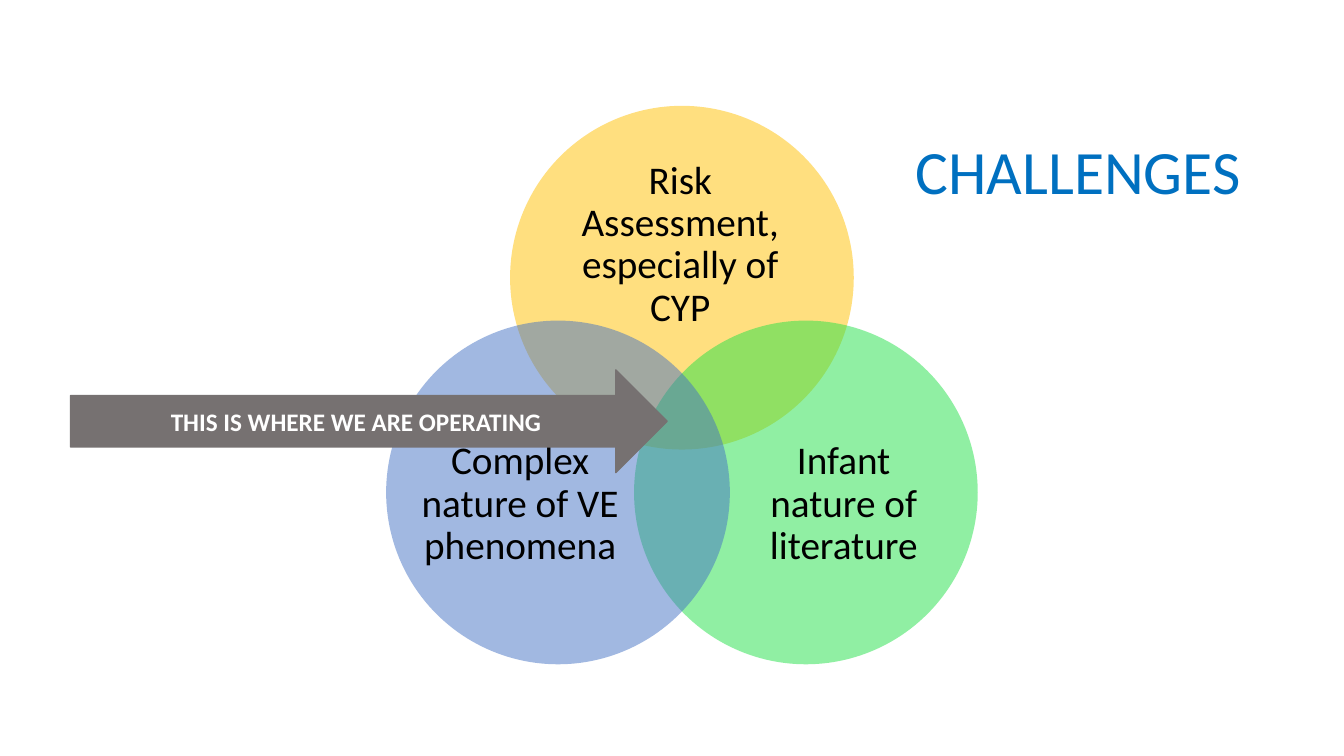
from dataclasses import dataclass
from math import cos, pi, sin

from lxml import etree
from pptx import Presentation
from pptx import util as u
from pptx.dml.color import RGBColor
from pptx.enum import shapes, text
from pptx.oxml.ns import qn


@dataclass(frozen=True)
class Theme:
    font: str = "Calibri"
    title_color: str = "0070C0"
    label_color: str = "000000"
    arrow_fill: str = "767171"
    arrow_text: str = "FFFFFF"
    yellow: str = "FFC000"
    green: str = "23E148"
    blue: str = "4472C4"
    title_size: int = 44
    label_size: int = 28
    arrow_size: int = 18


THEME = Theme()


def points(box):
    return [u.Pt(round(length, 2)) for length in box]


def write(shape, wording, size, color, alignment, bold=False, spacing=1.0):
    frame = shape.text_frame
    frame.word_wrap = True
    frame.auto_size = text.MSO_AUTO_SIZE.NONE
    frame.vertical_anchor = text.MSO_ANCHOR.MIDDLE
    paragraph = frame.paragraphs[0]
    paragraph.alignment = alignment
    paragraph.line_spacing = spacing
    run = paragraph.add_run()
    run.text = wording
    run.font.name = THEME.font
    run.font.size = u.Pt(size)
    run.font.bold = bold
    run.font.color.rgb = RGBColor.from_string(color)


def fill_shape(shape, color, opacity=100):
    shape.shadow.inherit = False
    shape.fill.solid()
    shape.fill.fore_color.rgb = RGBColor.from_string(color)
    if opacity < 100:
        color_node = shape.fill._xPr.find(qn("a:solidFill"))[0]
        etree.SubElement(color_node, qn("a:alpha"), val=str(opacity * 1000))


def place_title(slide, box, wording):
    title = slide.shapes.title
    title.left, title.top, title.width, title.height = points(box)
    write(title, wording, THEME.title_size, THEME.title_color,
          text.PP_ALIGN.RIGHT, spacing=0.9)


def draw_venn(slide, box, diameter, circles):
    left, top, width, height = box
    side = width - diameter
    orbit = side / 3 ** 0.5
    center_x, center_y = left + width / 2, top + diameter / 2 + orbit
    group = slide.shapes.add_group_shape()
    for index, (wording, color, label_area) in enumerate(circles):
        angle = -pi / 2 + index * 2 * pi / len(circles)
        circle_left = center_x + orbit * cos(angle) - diameter / 2
        circle_top = center_y + orbit * sin(angle) - diameter / 2
        circle = group.shapes.add_shape(
            shapes.MSO_SHAPE.OVAL,
            *points((circle_left, circle_top, diameter, diameter)))
        fill_shape(circle, color, opacity=50)
        circle.line.fill.background()

        across, down, wide, high = (share * diameter for share in label_area)
        label = group.shapes.add_textbox(
            *points((circle_left + across, circle_top + down, wide, high)))
        frame = label.text_frame
        frame.margin_left = frame.margin_right = u.Pt(0)
        frame.margin_top = frame.margin_bottom = u.Pt(0)
        write(label, wording, THEME.label_size, THEME.label_color,
              text.PP_ALIGN.CENTER, spacing=0.9)


def draw_arrow(slide, box, wording):
    arrow = slide.shapes.add_shape(shapes.MSO_SHAPE.RIGHT_ARROW, *points(box))
    fill_shape(arrow, THEME.arrow_fill)
    arrow.line.color.rgb = RGBColor.from_string(THEME.arrow_fill)
    arrow.line.width = u.Pt(1)
    write(arrow, wording, THEME.arrow_size, THEME.arrow_text,
          text.PP_ALIGN.CENTER, bold=True)


def build_challenges_slide(presentation):
    slide = presentation.slides.add_slide(presentation.slide_layouts[5])
    place_title(slide, (545.8, 28.8, 347.8, 192.2), "CHALLENGES")
    circles = [
        ("Risk Assessment, especially of CYP", THEME.yellow, (0.13, 0.18, 0.73, 0.45)),
        ("Infant nature of literature", THEME.green, (0.31, 0.26, 0.6, 0.55)),
        ("Complex nature of VE phenomena", THEME.blue, (0.09, 0.26, 0.6, 0.55)),
    ]
    draw_venn(slide, (275.8, 75.6, 422.6, 398.9), 245.5, circles)
    draw_arrow(slide, (50.4, 264.2, 426.2, 73.4), "THIS IS WHERE WE ARE OPERATING")


def main():
    presentation = Presentation()
    presentation.slide_width = u.Pt(960)
    presentation.slide_height = u.Pt(540)
    build_challenges_slide(presentation)
    presentation.save("out.pptx")


if __name__ == "__main__":
    main()
